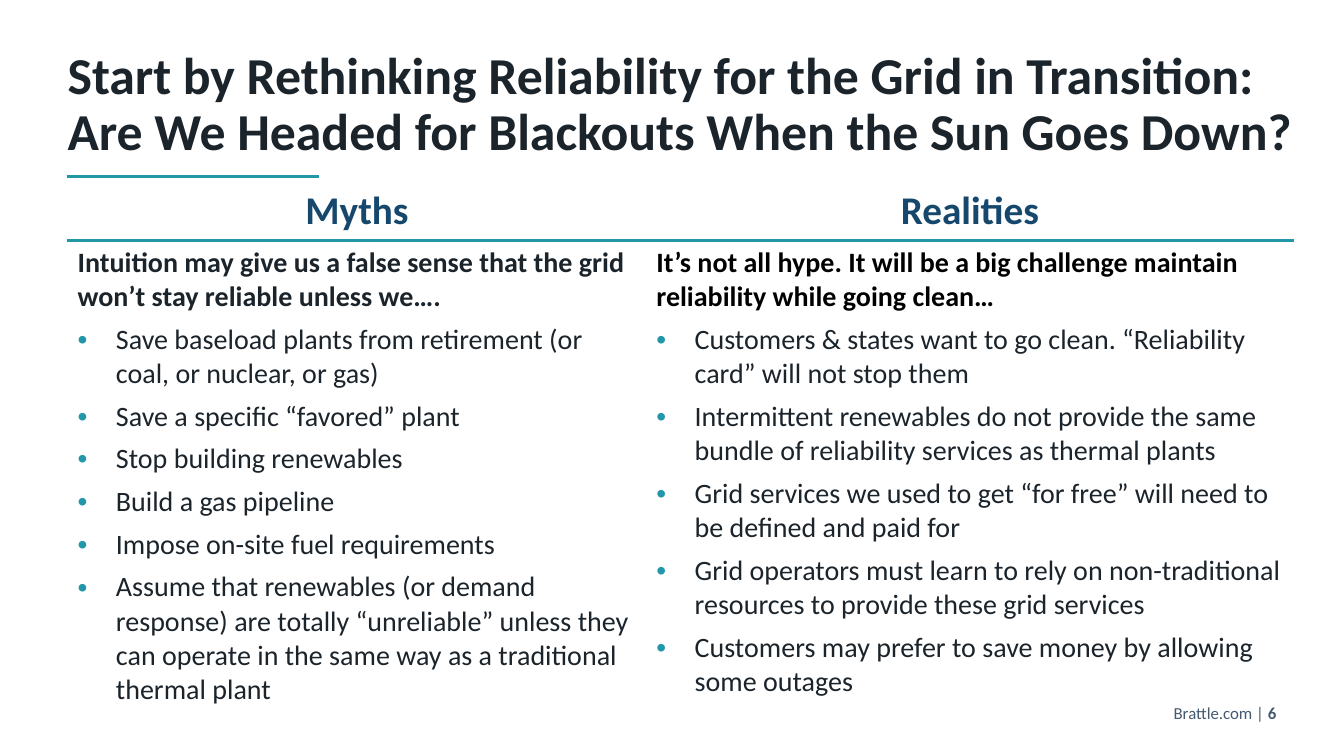
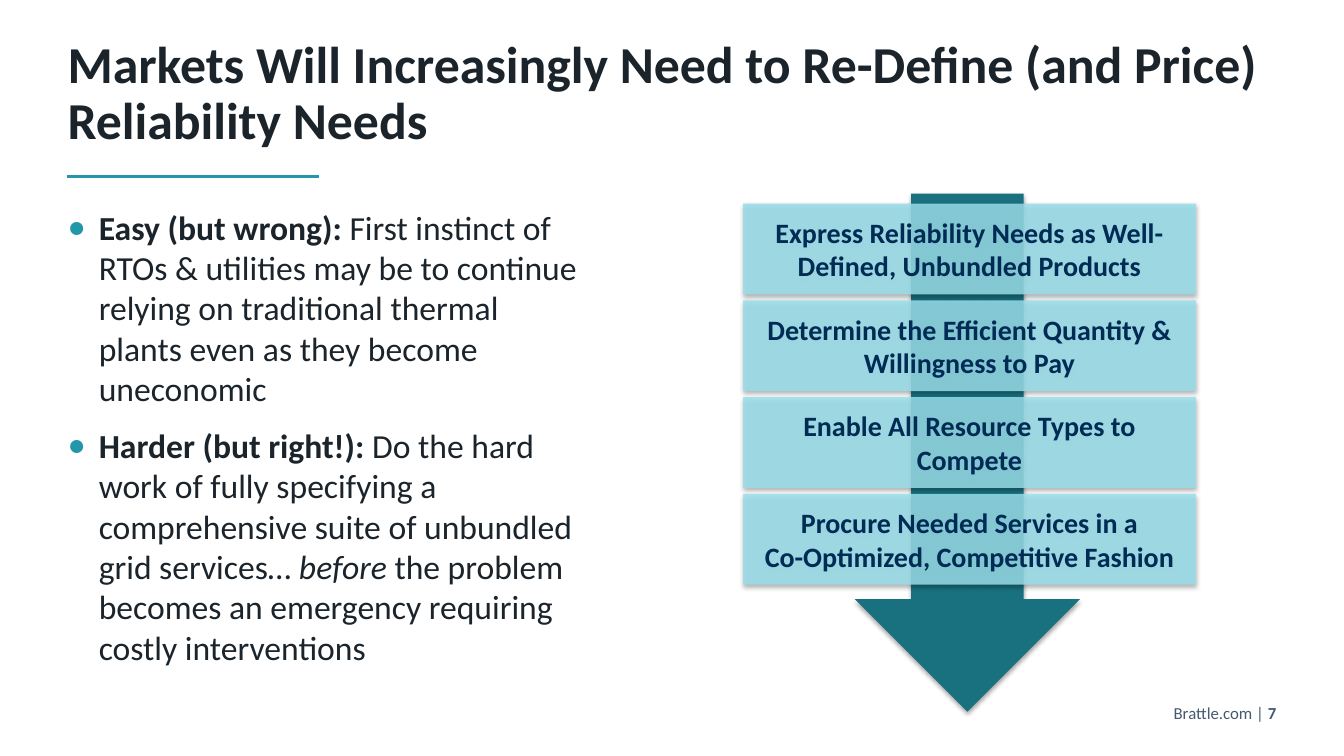
"""Build two slides on grid reliability: myths against realities, and market needs."""
import lxml.etree
import pptx
import pptx.dml.color
import pptx.enum.shapes
import pptx.enum.text
import pptx.oxml.ns
import pptx.util

Inches, Pt, qn = pptx.util.Inches, pptx.util.Pt, pptx.oxml.ns.qn
Align, Anchor = pptx.enum.text.PP_ALIGN, pptx.enum.text.MSO_ANCHOR
Shape = pptx.enum.shapes.MSO_SHAPE

FONT = "Calibri"
INK, TEAL, NAVY, GREY = "1B232B", "2297AA", "16486D", "455A6F"
DEEP, PALE, DARK, BLACK = "197180", "99DFEB", "002B54", "000000"

TITLES = [
    "Start by Rethinking Reliability for the Grid in Transition: "
    "Are We Headed for Blackouts When the Sun Goes Down?",
    "Markets Will Increasingly Need to Re-Define (and Price) Reliability Needs",
]
SITE, FIRST = "Brattle.com | ", 6

COLUMNS = [
    {"head": "Myths", "width": 5.74, "color": INK,
     "lead": "Intuition may give us a false sense that the grid won’t stay reliable unless we….",
     "items": [
         "Save baseload plants from retirement (or coal, or nuclear, or gas)",
         "Save a specific “favored” plant",
         "Stop building renewables",
         "Build a gas pipeline",
         "Impose on-site fuel requirements",
         "Assume that renewables (or demand response) are totally “unreliable” unless "
         "they can operate in the same way as a traditional thermal plant",
     ]},
    {"head": "Realities", "width": 6.42, "color": BLACK,
     "lead": "It’s not all hype. It will be a big challenge maintain reliability while going clean…",
     "items": [
         "Customers & states want to go clean. “Reliability card” will not stop them",
         "Intermittent renewables do not provide the same bundle of reliability services "
         "as thermal plants",
         "Grid services we used to get “for free” will need to be defined and paid for",
         "Grid operators must learn to rely on non-traditional resources to provide "
         "these grid services",
         "Customers may prefer to save money by allowing some outages",
     ]},
]

POINTS = [
    [("Easy (but wrong): ", "b"),
     ("First instinct of RTOs & utilities may be to continue relying on traditional "
      "thermal plants even as they become uneconomic", "")],
    [("Harder (but right!): ", "b"),
     ("Do the hard work of fully specifying a comprehensive suite of unbundled "
      "grid services… ", ""),
     ("before ", "i"),
     ("the problem becomes an emergency requiring costly interventions", "")],
]

STEPS = [
    ["Express Reliability Needs as Well-Defined, Unbundled Products"],
    ["Determine the Efficient Quantity & Willingness to Pay"],
    ["Enable All Resource Types to Compete"],
    ["Procure Needed Services in a", "Co-Optimized, Competitive Fashion"],
]


def rgb(code):
    return pptx.dml.color.RGBColor.from_string(code)


def node(parent, tag, **attrs):
    return lxml.etree.SubElement(parent, qn(tag), {k: str(v) for k, v in attrs.items()})


def tint(parent, code):
    return node(parent, "a:srgbClr", val=code)


def bullet(para, mark, indent, scale):
    props = para._p.get_or_add_pPr()
    props.set("marL", str(Inches(indent)))
    props.set("indent", str(-Inches(indent)))
    tint(node(props, "a:buClr"), TEAL)
    node(props, "a:buSzPct", val=scale * 1000)
    node(props, "a:buFont", typeface="Arial")
    node(props, "a:buChar", char=mark)


def write(frame, runs, size=20, color=INK, align=Align.LEFT, mark=None,
          indent=0, scale=100, before=0, spacing=None):
    """Add one paragraph of (text, style) runs, where style holds b and i flags."""
    fresh = len(frame.paragraphs) == 1 and not frame.paragraphs[0].runs
    para = frame.paragraphs[0] if fresh else frame.add_paragraph()
    if mark:
        bullet(para, mark, indent, scale)
    para.alignment = align
    para.space_before = Pt(0 if fresh else before)
    if spacing:
        para.line_spacing = spacing
    for text, style in runs:
        run = para.add_run()
        run.text = text
        font = run.font
        font.name, font.size, font.color.rgb = FONT, Pt(size), rgb(color)
        font.bold, font.italic = "b" in style, "i" in style


def place(shape, left, top, width, height):
    shape.left, shape.top = Inches(left), Inches(top)
    shape.width, shape.height = Inches(width), Inches(height)


def setup(frame, top, bottom, anchor=Anchor.TOP):
    frame.word_wrap = True
    frame.auto_size = pptx.enum.text.MSO_AUTO_SIZE.NONE
    frame.vertical_anchor = anchor
    frame.margin_left = frame.margin_right = 0
    frame.margin_top, frame.margin_bottom = Inches(top), Inches(bottom)


def start(deck, layout, index, box):
    """Add a slide with its title, accent rule and footer."""
    slide = deck.slides.add_slide(deck.slide_layouts[layout])
    rule = slide.shapes.add_connector(
        pptx.enum.shapes.MSO_CONNECTOR.STRAIGHT,
        Inches(0.66), Inches(1.75), Inches(3.16), Inches(1.75))
    rule.line.color.rgb, rule.line.width = rgb(TEAL), Pt(2)
    node(rule._element.spPr, "a:effectLst")

    title = slide.shapes.title
    place(title, *box)
    setup(title.text_frame, 0.05, 0.2, Anchor.BOTTOM)
    write(title.text_frame, [(TITLES[index], "b")], size=37, spacing=0.9)

    foot = slide.shapes.add_textbox(Inches(10.93), Inches(6.87), Inches(1.73), Inches(0.37))
    setup(foot.text_frame, 0.1, 0.1)
    write(foot.text_frame, [(SITE, ""), (str(FIRST + index), "b")],
          size=12, color=GREY, align=Align.RIGHT)
    return slide


def border(cell, side):
    edge = lxml.etree.Element(qn(side), w=str(Pt(3)))
    tint(node(edge, "a:solidFill"), TEAL)
    cell._tc.get_or_add_tcPr().insert(0, edge)


def compare(slide):
    """Draw the two-column table."""
    width = sum(col["width"] for col in COLUMNS)
    table = slide.shapes.add_table(
        2, len(COLUMNS), Inches(0.67), Inches(1.81), Inches(width), Inches(5.4)).table
    table.first_row = table.horz_banding = False
    table.rows[0].height, table.rows[1].height = Inches(0.51), Inches(4.89)
    for i, col in enumerate(COLUMNS):
        table.columns[i].width = Inches(col["width"])
        head, body = table.cell(0, i), table.cell(1, i)
        for cell, side in ((head, "a:lnB"), (body, "a:lnT")):
            cell.fill.background()
            border(cell, side)
        write(head.text_frame, [(col["head"], "b")], size=28, color=NAVY, align=Align.CENTER)
        write(body.text_frame, [(col["lead"], "b")], color=col["color"])
        for item in col["items"]:
            write(body.text_frame, [(item, "")], mark="•", indent=0.38, before=6)


def block(slide, kind, box, color, alpha=100):
    """Draw a filled shape with a soft shadow below it."""
    shape = slide.shapes.add_shape(kind, *map(Inches, box))
    shape.fill.solid()
    shape.fill.fore_color.rgb = rgb(color)
    props = shape._element.spPr
    if alpha < 100:
        node(props.find(".//" + qn("a:srgbClr")), "a:alpha", val=alpha * 1000)
    shape.line.fill.background()
    shape.shadow.inherit = False
    shade = node(props.find(qn("a:effectLst")), "a:outerShdw", blurRad=Pt(3.1),
                 dist=Pt(1.8), dir=90 * 60000, rotWithShape=0)
    node(tint(shade, BLACK), "a:alpha", val=35000)
    return shape


def flow(slide):
    """Draw the steps over a down arrow."""
    block(slide, Shape.DOWN_ARROW, (8.48, 1.92, 2.23, 5.14), DEEP)
    top, pitch = 2.02, 0.96
    for i, lines in enumerate(STEPS):
        step = block(slide, Shape.RECTANGLE, (7.37, top + i * pitch, 4.49, 0.9), PALE, 84)
        frame = step.text_frame
        frame.word_wrap, frame.vertical_anchor = True, Anchor.MIDDLE
        for line in lines:
            write(frame, [(line, "b")], color=DARK, align=Align.CENTER)


def main():
    deck = pptx.Presentation()
    deck.slide_width, deck.slide_height = Inches(13.33), Inches(7.5)

    compare(start(deck, 5, 0, (0.67, -0.13, 12.22, 1.93)))

    slide = start(deck, 1, 1, (0.67, 0.32, 12, 1.37))
    body = slide.placeholders[1]
    place(body, 0.67, 1.75, 5.07, 5)
    setup(body.text_frame, 0.3, 0.1)
    for runs in POINTS:
        write(body.text_frame, runs, size=24, mark="●", indent=0.31, scale=90, before=12)
    flow(slide)

    deck.save("out.pptx")


if __name__ == "__main__":
    main()
